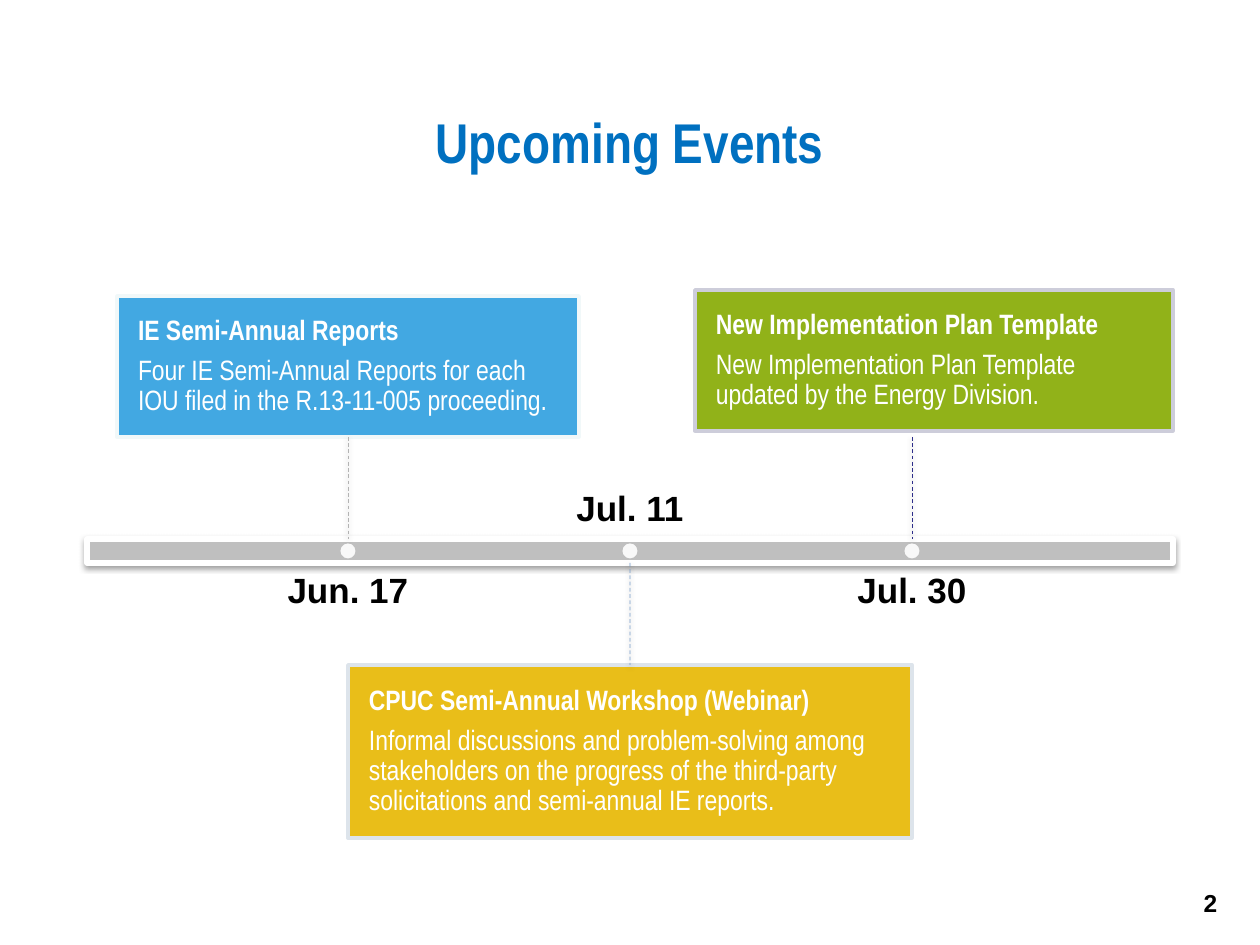
"""Build the Upcoming Events timeline slide."""
from lxml import etree
from pptx import Presentation
from pptx.dml.color import RGBColor
from pptx.enum.dml import MSO_LINE
from pptx.enum.shapes import MSO_CONNECTOR, MSO_SHAPE
from pptx.enum.text import MSO_ANCHOR, PP_ALIGN
from pptx.oxml.ns import qn
from pptx.util import Emu, Pt

RECTANGLE, OVAL = MSO_SHAPE.RECTANGLE, MSO_SHAPE.OVAL
STRAIGHT, DASH = MSO_CONNECTOR.STRAIGHT, MSO_LINE.DASH
LEFT, CENTER = PP_ALIGN.LEFT, PP_ALIGN.CENTER
TOP, MIDDLE, BOTTOM = MSO_ANCHOR.TOP, MSO_ANCHOR.MIDDLE, MSO_ANCHOR.BOTTOM
TOP_SITE, BOTTOM_SITE = 0, 2

SCALE = 914400 / 126
BAR = (87, 539, 1086, 24)
FIRST_X, STEP_X = 348, 282
DOT = 15
DATE_WIDTH, DATE_HEIGHT, DATE_GAP = 417, 68, 10
CARD_INSET = 21
LINE_TOP = 437

EVENTS = [
    {"date": "Jun. 17", "card": (117, 296, 462, 141), "above": True,
     "fill": "2E9FDF", "border": "F1F8F9", "stem": "B3B3B3",
     "text": ("IE Semi-Annual Reports",
              "Four IE Semi-Annual Reports for each IOU filed in the "
              "R.13-11-005 proceeding.")},
    {"date": "Jul. 11", "card": (348, 665, 564, 173), "above": False,
     "fill": "E7B800", "border": "DDE4EB", "stem": "759CCB",
     "text": ("CPUC Semi-Annual Workshop (Webinar)",
              "Informal discussions and problem-solving among stakeholders on "
              "the progress of the third-party solicitations and semi-annual "
              "IE reports.")},
    {"date": "Jul. 30", "card": (695, 290, 478, 141), "above": True,
     "fill": "86AA00", "border": "CDCDDA", "stem": "2D2D8A",
     "text": ("New Implementation Plan Template",
              "New Implementation Plan Template updated by the Energy "
              "Division.")},
]


def px(*lengths):
    return [Emu(round(length * SCALE)) for length in lengths]


def color(value):
    return RGBColor.from_string(value)


def add_shadow(effects):
    shadow = etree.SubElement(effects, qn("a:outerShdw"), blurRad="39370",
                              dist="20320", dir="5400000", rotWithShape="0")
    black = etree.SubElement(shadow, qn("a:srgbClr"), val="000000")
    etree.SubElement(black, qn("a:alpha"), val="38000")


def add_block(page, kind, area, fill, border=None, width=0, alpha=100):
    block = page.shapes.add_shape(kind, *px(*area))
    block.fill.solid()
    block.fill.fore_color.rgb = color(fill)
    if alpha < 100:
        tint = block.fill._xPr.find(".//" + qn("a:srgbClr"))
        etree.SubElement(tint, qn("a:alpha"), val=str(alpha * 1000))
    if border:
        block.line.color.rgb = color(border)
        block.line.width = Pt(width)
    else:
        block.line.fill.background()
    block.shadow.inherit = False
    return block


def write(box, lines, font, size, ink, align, anchor, inset=0, spacing=0.9):
    frame = box.text_frame
    frame.text = "\n".join(lines)
    frame.word_wrap = True
    frame.vertical_anchor = anchor
    margin, = px(inset)
    frame.margin_left = frame.margin_right = margin
    frame.margin_top = frame.margin_bottom = margin
    for number, para in enumerate(frame.paragraphs):
        para.alignment = align
        para.line_spacing = spacing
        if number < len(lines) - 1:
            para.space_after = Pt(5.6)
        for span in para.runs:
            span.font.name = font
            span.font.size = Pt(size)
            span.font.bold = number == 0
            span.font.color.rgb = color(ink)


def add_stem(page, event, x, card, bar):
    bar_top, bar_bottom = BAR[1], BAR[1] + BAR[3]
    if event["above"]:
        start, end = LINE_TOP, bar_top
    else:
        start, end = bar_bottom, event["card"][1]
    stem = page.shapes.add_connector(STRAIGHT, *px(x, start, x, end))
    left, _, width, _ = event["card"]
    if left + width / 2 == x:
        if event["above"]:
            stem.begin_connect(card, BOTTOM_SITE)
        else:
            stem.end_connect(card, TOP_SITE)
    if BAR[0] + BAR[2] / 2 == x:
        stem.begin_connect(bar, BOTTOM_SITE)
    stem.line.color.rgb = color(event["stem"])
    stem.line.width = Pt(0.5)
    stem.line.dash_style = DASH
    add_shadow(etree.SubElement(stem._element.spPr, qn("a:effectLst")))


def add_event(page, event, x, bar):
    card = add_block(page, RECTANGLE, event["card"], event["fill"],
                     event["border"], 2, alpha=90)
    write(card, event["text"], "Arial Narrow", 16, "FFFFFF", LEFT, MIDDLE,
          CARD_INSET)
    add_stem(page, event, x, card, bar)

    add_block(page, OVAL, (x - DOT / 2, BAR[1] + (BAR[3] - DOT) / 2, DOT, DOT),
              "FFFFFF", alpha=90)

    if event["above"]:
        top, anchor = BAR[1] + BAR[3] + DATE_GAP, TOP
    else:
        top, anchor = BAR[1] - DATE_GAP - DATE_HEIGHT, BOTTOM
    date = page.shapes.add_textbox(
        *px(x - DATE_WIDTH / 2, top, DATE_WIDTH, DATE_HEIGHT))
    write(date, [event["date"]], "Arial", 20, "000000", CENTER, anchor)


def main():
    deck = Presentation()
    deck.slide_width, deck.slide_height = px(1260, 945)
    page = deck.slides.add_slide(deck.slide_layouts[5])

    title = page.shapes.title
    title.left, title.top, title.width, title.height = px(87, 50, 1086, 183)
    write(title, ["Upcoming Events"], "Arial Narrow", 32, "0070C0", CENTER,
          MIDDLE, spacing=1.0)

    bar = add_block(page, RECTANGLE, BAR, "BFBFBF", "FFFFFF", 3)
    add_shadow(bar._element.spPr.find(qn("a:effectLst")))
    for number, event in enumerate(EVENTS):
        add_event(page, event, FIRST_X + number * STEP_X, bar)

    page_number = page.shapes.add_textbox(*px(1158, 882, 105, 63))
    write(page_number, ["2"], "Arial", 14, "000000", CENTER, TOP, 6, 1.0)
    deck.save("out.pptx")


if __name__ == "__main__":
    main()
